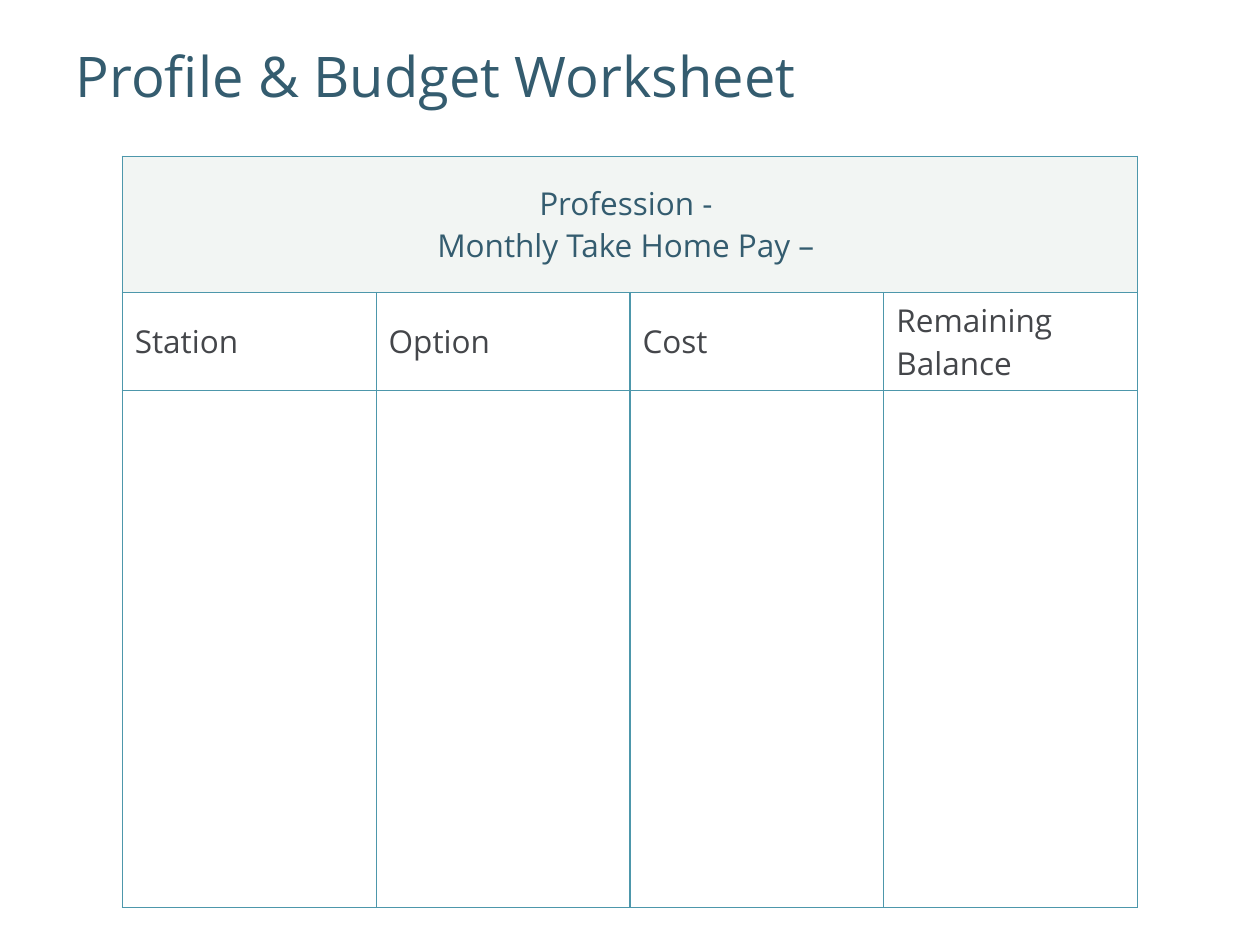
from dataclasses import dataclass

import lxml.etree
import pptx
import pptx.dml.color
import pptx.enum.text
import pptx.oxml.ns
import pptx.slide
import pptx.table
import pptx.text.text
import pptx.util

RGBColor = pptx.dml.color.RGBColor
ANCHOR = pptx.enum.text.MSO_ANCHOR
ALIGN = pptx.enum.text.PP_ALIGN

HEADING = RGBColor(0x34, 0x5C, 0x6F)
BODY = RGBColor(0x44, 0x46, 0x4A)
RULE = RGBColor(0x4D, 0x97, 0xAB)
BAND = RGBColor(0xF2, 0xF5, 0xF3)
FONT = "Open Sans"

SLIDE_WIDTH = pptx.util.Inches(10)
SLIDE_HEIGHT = pptx.util.Inches(7.5)
COLUMN_WIDTH = pptx.util.Inches(2.015)
ROW_HEIGHTS = [pptx.util.Inches(height) for height in (1.08, 0.78, 4.1)]
TABLE_TOP = pptx.util.Inches(1.24)


@dataclass(frozen=True)
class Entry:
    row: int
    column: int
    lines: tuple[str, ...]
    color: RGBColor = BODY
    align: ALIGN = ALIGN.LEFT


COLUMN_HEADS = ("Station", "Option", "Cost", "Remaining Balance")
ENTRIES = [
    Entry(0, 0, ("Profession - ", "Monthly Take Home Pay – "), HEADING, ALIGN.CENTER),
    *(Entry(1, column, (head,)) for column, head in enumerate(COLUMN_HEADS)),
]


def write_text(frame: pptx.text.text.TextFrame, lines: tuple[str, ...], *,
               size: float, color: RGBColor, align: ALIGN = ALIGN.LEFT,
               spacing: float = 1.0) -> None:
    for index, line in enumerate(lines):
        paragraph = frame.paragraphs[0] if index == 0 else frame.add_paragraph()
        paragraph.alignment = align
        paragraph.line_spacing = spacing
        run = paragraph.add_run()
        run.text = line
        run.font.name = FONT
        run.font.size = pptx.util.Pt(size)
        run.font.color.rgb = color


def outline_cell(cell: pptx.table._Cell) -> None:
    """Rule all four sides; borders must precede the fill in the cell's XML."""
    properties = cell._tc.get_or_add_tcPr()
    qn = pptx.oxml.ns.qn
    for position, side in enumerate(("a:lnL", "a:lnR", "a:lnT", "a:lnB")):
        line = lxml.etree.Element(qn(side), w=str(pptx.util.Pt(0.75)))
        solid = lxml.etree.SubElement(line, qn("a:solidFill"))
        lxml.etree.SubElement(solid, qn("a:srgbClr"), val=str(RULE))
        properties.insert(position, line)


def add_title(slide: pptx.slide.Slide, wording: str) -> None:
    title = slide.shapes.title
    title.left, title.top = int(SLIDE_WIDTH * 0.06), int(SLIDE_HEIGHT * 0.04)
    title.width, title.height = int(SLIDE_WIDTH * 0.88), pptx.util.Inches(1.1)
    frame = title.text_frame
    frame.margin_left = frame.margin_top = frame.margin_right = frame.margin_bottom = 0
    frame.vertical_anchor = ANCHOR.TOP
    frame.auto_size = pptx.enum.text.MSO_AUTO_SIZE.NONE
    write_text(frame, (wording,), size=32, color=HEADING, spacing=1.05)


def add_worksheet(slide: pptx.slide.Slide) -> None:
    width = COLUMN_WIDTH * len(COLUMN_HEADS)
    worksheet = slide.shapes.add_table(
        len(ROW_HEIGHTS), len(COLUMN_HEADS), (SLIDE_WIDTH - width) // 2,
        TABLE_TOP, width, sum(ROW_HEIGHTS)).table
    worksheet.first_row = worksheet.horz_banding = False
    for column in worksheet.columns:
        column.width = COLUMN_WIDTH
    for row, height in zip(worksheet.rows, ROW_HEIGHTS):
        row.height = height

    for cell in worksheet.iter_cells():
        cell.fill.background()
        outline_cell(cell)
    profile = worksheet.cell(0, 0)
    profile.merge(worksheet.cell(0, len(COLUMN_HEADS) - 1))
    profile.fill.solid()
    profile.fill.fore_color.rgb = BAND

    for entry in ENTRIES:
        cell = worksheet.cell(entry.row, entry.column)
        cell.vertical_anchor = ANCHOR.MIDDLE
        write_text(cell.text_frame, entry.lines, size=18,
                   color=entry.color, align=entry.align)


def main() -> None:
    deck = pptx.Presentation()
    deck.slide_width, deck.slide_height = SLIDE_WIDTH, SLIDE_HEIGHT
    slide = deck.slides.add_slide(deck.slide_layouts.get_by_name("Title Only"))
    add_title(slide, "Profile & Budget Worksheet")
    add_worksheet(slide)
    deck.save("out.pptx")


if __name__ == "__main__":
    main()
